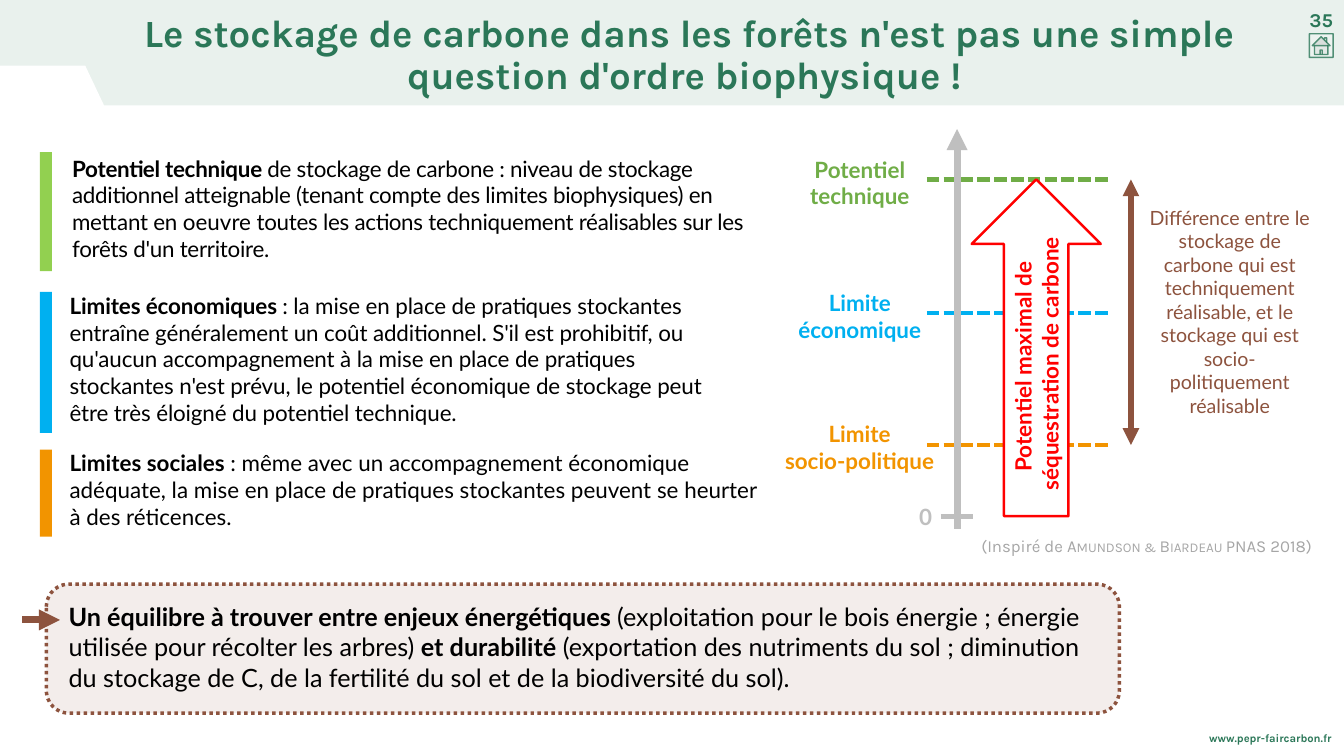
from pptx import Presentation
from pptx.dml.color import RGBColor
from pptx.enum.dml import MSO_LINE
from pptx.enum.shapes import MSO_CONNECTOR, MSO_SHAPE
from pptx.enum.text import MSO_ANCHOR, MSO_AUTO_SIZE, PP_ALIGN
from pptx.oxml.ns import qn
from pptx.util import Inches, Pt
from lxml.etree import SubElement

GREEN = RGBColor(0x2B, 0x77, 0x58)
WHITE = RGBColor(0xFF, 0xFF, 0xFF)
BLACK = RGBColor(0, 0, 0)
LIME = RGBColor(0x92, 0xD0, 0x50)
LEAF = RGBColor(0x70, 0xAD, 0x47)
BLUE = RGBColor(0x00, 0xB0, 0xF0)
ORANGE = RGBColor(0xF2, 0x94, 0x00)
BROWN = RGBColor(0x8D, 0x53, 0x3E)
GREY = RGBColor(0xA6, 0xA6, 0xA6)
SILVER = RGBColor(0xBF, 0xBF, 0xBF)
RED = RGBColor(0xFF, 0, 0)

COLS, ROWS = 80, 45
TECHNICAL, ECONOMIC, SOCIAL = 10.68, 18.63, 26.49
AXIS = 56.97


class Deck:
    def __init__(self):
        self.prs = Presentation()
        self.prs.slide_width = Inches(26.67)
        self.prs.slide_height = Inches(15)
        self.s = self.prs.slides.add_slide(self.prs.slide_layouts[6])

    def x(self, cols):
        return round(self.prs.slide_width * cols / COLS)

    def y(self, rows):
        return round(self.prs.slide_height * rows / ROWS)

    def box(self, left, top, width, height):
        return self.x(left), self.y(top), self.x(width), self.y(height)

    def paint(self, fill, color, alpha=100):
        fill.solid()
        fill.fore_color.rgb = color
        if alpha < 100:
            clr = next(fill._xPr.iter(qn("a:srgbClr")))
            SubElement(clr, qn("a:alpha")).set("val", str(alpha * 1000))

    def stroke(self, line, color, width, dash=None, alpha=100):
        self.paint(line.fill, color, alpha)
        line.width = Pt(width)
        if dash:
            line.dash_style = dash

    def style(self, sp, fill, alpha=100, line=None):
        sp.shadow.inherit = False
        self.paint(sp.fill, fill, alpha)
        if line:
            self.stroke(sp.line, *line)
        else:
            sp.line.fill.background()
        return sp

    def shape(self, kind, at, fill, alpha=100, line=None):
        return self.style(self.s.shapes.add_shape(kind, *self.box(*at)), fill, alpha, line)

    def polygon(self, points, fill):
        first, *rest = [(self.x(a), self.y(b)) for a, b in points]
        fb = self.s.shapes.build_freeform(*first)
        fb.add_line_segments(rest, close=True)
        return self.style(fb.convert_to_shape(), fill)

    def line(self, start, end, color, width, dash=None, arrows=()):
        cx = self.s.shapes.add_connector(
            MSO_CONNECTOR.STRAIGHT, self.x(start[0]), self.y(start[1]), self.x(end[0]), self.y(end[1]))
        self.stroke(cx.line, color, width, dash)
        for arrow in arrows:
            SubElement(cx.line._get_or_add_ln(), qn(f"a:{arrow}")).set("type", "triangle")
        SubElement(cx._element.spPr, qn("a:effectLst"))
        return cx

    def label(self, sp, runs, size, color, font="Lato", bold=False, align=PP_ALIGN.LEFT,
              spacing=None, insets=(0.05,) * 4, **frame):
        tf = sp.text_frame
        sides = ("margin_left", "margin_top", "margin_right", "margin_bottom")
        frame = {"word_wrap": True, **frame, **dict(zip(sides, map(Inches, insets)))}
        for name, value in frame.items():
            setattr(tf, name, value)
        p = tf.paragraphs[0]
        for name, value in {"alignment": align, "line_spacing": spacing}.items():
            setattr(p, name, value)
        for text, extra in [(runs, {})] if isinstance(runs, str) else runs:
            extra = dict(extra)
            fmt = {"name": font, "size": Pt(size), "bold": extra.pop("bold", bold)}
            for i, part in enumerate(text.split("\n")):
                if i:
                    p.add_line_break()
                r = p.add_run()
                r.text = part
                for name, value in fmt.items():
                    setattr(r.font, name, value)
                r.font.color.rgb = color
                for name, value in extra.items():
                    r._r.get_or_add_rPr().set(name, str(value))
        return sp

    def text(self, at, runs, size, color, **fmt):
        sp = self.s.shapes.add_textbox(*self.box(*at))
        return self.label(sp, runs, size, color, auto_size=MSO_AUTO_SIZE.SHAPE_TO_FIT_TEXT, **fmt)

    def definition(self, top, bar_height, color, size, runs, **fmt):
        self.shape(MSO_SHAPE.RECTANGLE, (2.37, top, 0.72, bar_height), color)
        self.text((4.14, top, *size), runs, 32, BLACK, **fmt)

    def level(self, row, color, at, name):
        self.text(at, name, 32, color, bold=True, align=PP_ALIGN.CENTER, word_wrap=False)
        self.line((55.17, row), (66.15, row), color, 6, MSO_LINE.SQUARE_DOT)


def main():
    d = Deck()
    title = {"font": "Karla", "bold": True}
    center = {"align": PP_ALIGN.CENTER}
    bold = {"bold": True}
    flush = {"insets": (0, 0, 0, 0)}

    d.shape(MSO_SHAPE.RECTANGLE, (0, 0, COLS, 6.27), GREEN, 10)
    d.shape(MSO_SHAPE.ACTION_BUTTON_HOME, (77.94, 2.01, 1.41, 1.41), WHITE, 20, (GREEN, 2, None, 80))
    d.text((77.46, 0.33, 2.37, 1.71), "35", 28, GREEN, **title, **center)
    d.text((71.67, 43.41, 7.89, 1.11), "www.pepr-faircarbon.fr", 16, GREEN, **title,
           align=PP_ALIGN.RIGHT, insets=(0.1, 0.05, 0.1, 0.05))
    d.polygon([(0, 3.9), (5.07, 3.9), (7.41, 8.85), (0, 8.85)], WHITE)
    d.text((6.24, 0.66, 69.57, 5.34),
           "Le stockage de carbone dans les forêts n'est pas une simple question d'ordre biophysique ! ",
           55, GREEN, **title, **center, spacing=0.9, insets=(0.06,) * 4,
           vertical_anchor=MSO_ANCHOR.MIDDLE)

    d.definition(17.37, 8.4, BLUE, (40.17, 8.07), [
        ("Limites économiques ", {"bold": True, "spc": -20}),
        (": la mise en place de pratiques stockantes entraîne généralement un coût additionnel. "
         "S'il est prohibitif, ou qu'aucun accompagnement à la mise en place de pratiques stockantes "
         "n'est prévu, le potentiel économique de stockage peut être très éloigné du potentiel technique.",
         {"spc": -20})], **flush)
    d.definition(26.76, 5.19, ORANGE, (41.19, 4.86), [
        ("Limites sociales ", bold),
        (": même avec un accompagnement économique adéquate, la mise en place de pratiques "
         "stockantes peuvent se heurter à des réticences.", {})], **flush)
    d.definition(9.06, 7.08, LIME, (40.32, 6.78), [
        ("Potentiel technique ", {"bold": True, "spc": -40}),
        ("de stockage de carbone : niveau de stockage additionnel atteignable (tenant compte des "
         "limites biophysiques) en mettant en ", {"spc": -40}),
        ("o", {"spc": -600}),
        ("euvre", {"spc": 0}),
        (" toutes les actions techniquement réalisables sur les forêts d'un territoire.", {"spc": -40})])

    d.text((58.26, 31.71, 19.98, 1.53), [
        ("(Inspiré de ", {}), ("Amundson & Biardeau ", {"cap": "small"}), ("PNAS 2018)", {})],
        24, GREY, font="Karla", align=PP_ALIGN.RIGHT)

    d.level(TECHNICAL, LEAF, (47.73, 9.12, 6.9, 3.54), "Potentiel\ntechnique")
    d.level(ECONOMIC, BLUE, (46.98, 17.04, 8.4, 3.54), "Limite\néconomique")
    d.level(SOCIAL, ORANGE, (46.11, 24.87, 10.11, 3.54), "Limite\nsocio-politique")
    d.line((56.01, 30.75), (57.9, 30.75), SILVER, 6)
    d.text((54.54, 29.79, 1.11, 1.92), "0", 32, SILVER, bold=True, word_wrap=False, **center)

    d.line((67.32, SOCIAL), (67.32, TECHNICAL), BROWN, 8, arrows=("headEnd", "tailEnd"))
    d.text((68.01, 12.09, 10.38, 13.02),
           "Différence entre le stockage de carbone qui est techniquement réalisable, et le stockage "
           "qui est socio-politiquement réalisable", 28, BROWN, **center)

    arrow = d.shape(MSO_SHAPE.UP_ARROW, (57.84, TECHNICAL, 7.68, 20.04), WHITE, line=(RED, 3.5))
    d.label(arrow, "Potentiel maximal de \nséquestration de carbone", 32, RED, bold=True, **center,
            insets=(0.1, 0.05, 0.1, 0.05), vertical_anchor=MSO_ANCHOR.MIDDLE)
    arrow.text_frame._txBody.bodyPr.set("vert", "vert270")
    d.line((AXIS, 31.47), (AXIS, 7.68), SILVER, 10, arrows=("tailEnd",))

    callout = d.shape(MSO_SHAPE.ROUNDED_RECTANGLE, (2.76, 34.77, 63.87, 7.68), BROWN, 10,
                      (BROWN, 5, MSO_LINE.ROUND_DOT))
    callout.adjustments[0] = 0.175
    d.label(callout, [
        ("Un équilibre à trouver entre enjeux énergétiques ", bold),
        ("(exploitation pour le bois énergie ; énergie utilisée pour récolter les arbres) ", {}),
        ("et durabilité", bold),
        (" (exportation des nutriments du sol ; diminution du stockage de C, de la fertilité du sol "
         "et de la biodiversité du sol).", {})],
        36, BLACK, insets=(0.31, 0.24, 0.31, 0.31), vertical_anchor=MSO_ANCHOR.MIDDLE)
    d.line((1.32, 36.9), (3.57, 36.9), BROWN, 10, arrows=("tailEnd",))

    d.prs.save("out.pptx")


if __name__ == "__main__":
    main()
